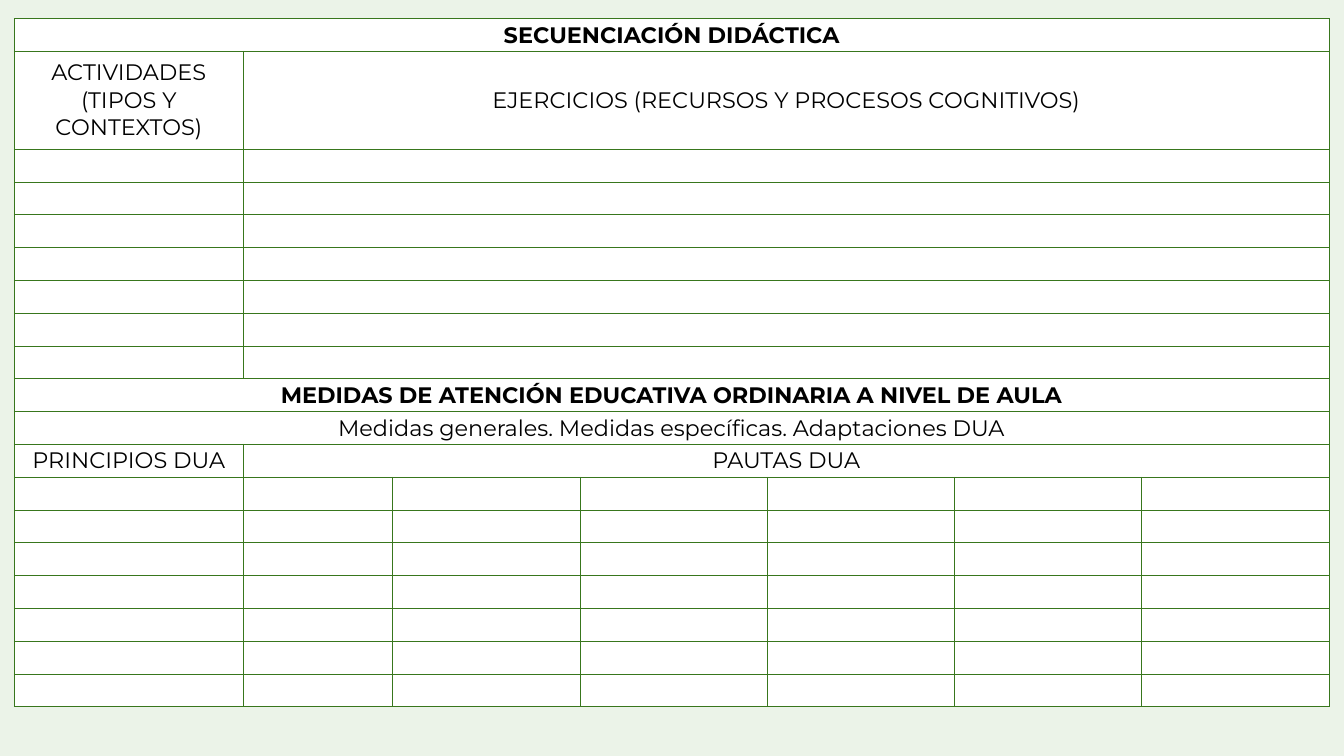
from typing import NamedTuple

from lxml import etree
from pptx import Presentation
from pptx import util as u
from pptx.dml.color import RGBColor
from pptx.enum import text
from pptx.oxml.ns import qn

FONT = "Montserrat"
FONT_SIZE = u.Pt(12)
BACKGROUND, WHITE, BLACK, GREEN = "EBF3E8", "FFFFFF", "000000", "38761D"
COLUMNS = [4.33, 2.82] + [3.54] * 5
ROW_HEIGHT, HEADING_HEIGHT = 0.62, 1.85
CELL_FORMAT = {
    "margin_left": u.Cm(0.18),
    "margin_right": u.Cm(0.18),
    "margin_top": 0,
    "margin_bottom": 0,
    "vertical_anchor": text.MSO_ANCHOR.MIDDLE,
}


class Row(NamedTuple):
    starts: tuple[int, ...]
    labels: tuple[str, ...] = ()
    bold: bool = False
    height: float = ROW_HEIGHT


FULL, PAIR, GRID = (0,), (0, 1), tuple(range(len(COLUMNS)))
ROWS = [
    Row(FULL, ("SECUENCIACIÓN DIDÁCTICA",), bold=True),
    Row(
        PAIR,
        ("ACTIVIDADES (TIPOS Y CONTEXTOS)", "EJERCICIOS (RECURSOS Y PROCESOS COGNITIVOS)"),
        height=HEADING_HEIGHT,
    ),
    *[Row(PAIR)] * 7,
    Row(FULL, ("MEDIDAS DE ATENCIÓN EDUCATIVA ORDINARIA A NIVEL DE AULA",), bold=True),
    Row(FULL, ("Medidas generales. Medidas específicas. Adaptaciones DUA",)),
    Row(PAIR, ("PRINCIPIOS DUA", "PAUTAS DUA")),
    *[Row(GRID)] * 7,
]


def rgb(value: str) -> RGBColor:
    return RGBColor.from_string(value)


def set_borders(cell, color: str, width: float) -> None:
    tc_pr = cell._tc.get_or_add_tcPr()
    for i, side in enumerate(("lnL", "lnR", "lnT", "lnB")):
        ln = etree.Element(qn(f"a:{side}"), w=str(u.Pt(width)))
        fill = etree.SubElement(ln, qn("a:solidFill"))
        etree.SubElement(fill, qn("a:srgbClr"), val=color)
        tc_pr.insert(i, ln)


def format_cell(cell) -> None:
    for name, value in CELL_FORMAT.items():
        setattr(cell, name, value)
    cell.fill.solid()
    cell.fill.fore_color.rgb = rgb(WHITE)
    set_borders(cell, GREEN, 0.5)


def write_cell(cell, label: str, bold: bool) -> None:
    p = cell.text_frame.paragraphs[0]
    p.alignment = text.PP_ALIGN.CENTER
    if not label:
        end = etree.SubElement(p._p, qn("a:endParaRPr"), sz=str(int(FONT_SIZE.pt * 100)))
        etree.SubElement(end, qn("a:latin"), typeface=FONT)
        return
    r = p.add_run()
    r.text = label
    for name, value in {"name": FONT, "size": FONT_SIZE, "bold": bold}.items():
        setattr(r.font, name, value)
    r.font.color.rgb = rgb(BLACK)


def draw_row(table, index: int, row: Row) -> None:
    table.rows[index].height = u.Cm(row.height)
    for column in range(len(COLUMNS)):
        cell = table.cell(index, column)
        format_cell(cell)
        position = row.starts.index(column) if column in row.starts else len(row.labels)
        label = row.labels[position] if position < len(row.labels) else ""
        write_cell(cell, label, row.bold)
    ends = (*row.starts[1:], len(COLUMNS))
    for start, end in zip(row.starts, ends):
        if end - start > 1:
            table.cell(index, start).merge(table.cell(index, end - 1))


def main() -> None:
    prs = Presentation()
    prs.slide_width, prs.slide_height = u.Cm(25.4), u.Cm(14.29)
    s = prs.slides.add_slide(prs.slide_layouts[6])
    s.background.fill.solid()
    s.background.fill.fore_color.rgb = rgb(BACKGROUND)
    table = s.shapes.add_table(
        len(ROWS), len(COLUMNS), u.Cm(0.27), u.Cm(0.35),
        u.Cm(sum(COLUMNS)), u.Cm(sum(row.height for row in ROWS)),
    ).table
    table.first_row = table.horz_banding = False
    for column, width in zip(table.columns, COLUMNS):
        column.width = u.Cm(width)
    for index, row in enumerate(ROWS):
        draw_row(table, index, row)
    prs.save("out.pptx")


if __name__ == "__main__":
    main()
